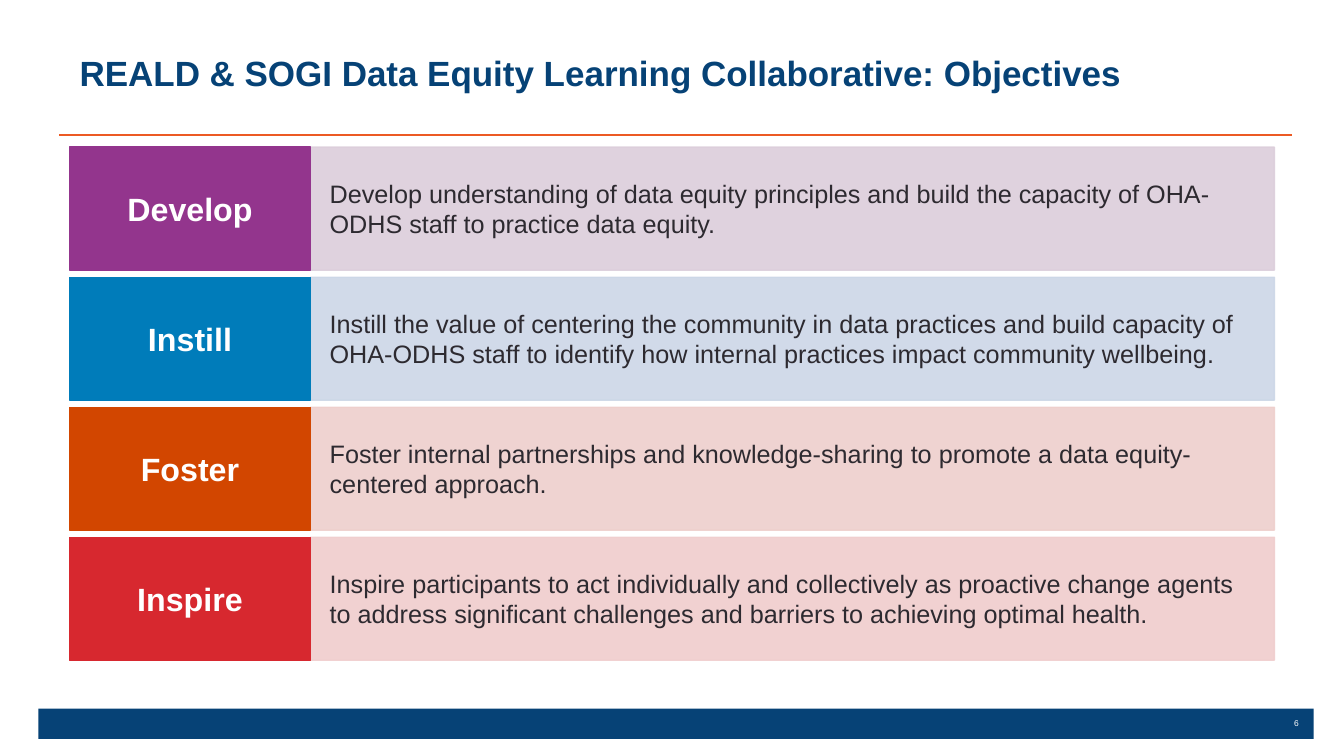
from pptx import Presentation
from pptx.dml.color import RGBColor
from pptx.enum.shapes import MSO_CONNECTOR, MSO_SHAPE
from pptx.enum.text import MSO_ANCHOR, PP_ALIGN
from pptx.oxml.ns import qn
from pptx.util import Inches, Pt
from lxml.etree import SubElement

SLIDE_W, SLIDE_H = 13.33, 7.5
NAVY, ORANGE, INK, WHITE = "064276", "EC5A24", "2D2A30", "FFFFFF"
LABEL_SHARE = 0.2
ROW_GAP = 0.07

OBJECTIVES = [
    ("Develop", "93358D", "DCCEDB",
     "Develop understanding of data equity principles and build the capacity "
     "of OHA-ODHS staff to practice data equity."),
    ("Instill", "007CBA", "CCD7E7",
     "Instill the value of centering the community in data practices and build "
     "capacity of OHA-ODHS staff to identify how internal practices impact "
     "community wellbeing."),
    ("Foster", "D24600", "EECFCC",
     "Foster internal partnerships and knowledge-sharing to promote a data "
     "equity-centered approach."),
    ("Inspire", "D7282F", "F0CDCD",
     "Inspire participants to act individually and collectively as proactive "
     "change agents to address significant challenges and barriers to "
     "achieving optimal health."),
]


def color(hex_string):
    return RGBColor.from_string(hex_string)


def write(shape, text, size, hex_string, bold=False, align=PP_ALIGN.LEFT,
          anchor=MSO_ANCHOR.MIDDLE, insets=(0.1, 0.05, 0.1, 0.05), spacing=1.0):
    frame = shape.text_frame
    frame.word_wrap = True
    frame.vertical_anchor = anchor
    (frame.margin_left, frame.margin_top,
     frame.margin_right, frame.margin_bottom) = map(Inches, insets)
    paragraph = frame.paragraphs[0]
    paragraph.alignment = align
    paragraph.line_spacing = spacing
    run = paragraph.add_run()
    run.text = text
    run.font.name = "Arial"
    run.font.size = Pt(size)
    run.font.bold = bold
    run.font.color.rgb = color(hex_string)


def add_block(slide, box, hex_string, opacity=100, outlined=True):
    block = slide.shapes.add_shape(MSO_SHAPE.RECTANGLE, *map(Inches, box))
    block.shadow.inherit = False
    block.fill.solid()
    block.fill.fore_color.rgb = color(hex_string)
    if outlined:
        block.line.color.rgb = color(hex_string)
        block.line.width = Pt(1)
    else:
        block.line.fill.background()
    if opacity < 100:
        for tint in block.element.spPr.iter(qn("a:srgbClr")):
            SubElement(tint, qn("a:alpha"), val=str(opacity * 1000))
    return block


def add_heading(slide, box):
    left, top, width, height = box
    title = slide.shapes.title
    title.left, title.top, title.width, title.height = map(
        Inches, (left, top, 10.94, height))
    write(title, "REALD & SOGI Data Equity Learning Collaborative: Objectives",
          25, NAVY, bold=True, anchor=MSO_ANCHOR.BOTTOM,
          insets=(0.1, 0.05, 0.1, 0.41), spacing=0.9)
    rule_y = Inches(top + height)
    rule = slide.shapes.add_connector(
        MSO_CONNECTOR.STRAIGHT, Inches(left - 0.1), rule_y,
        Inches(left + width + 0.17), rule_y)
    rule.line.color.rgb = color(ORANGE)
    rule.line.width = Pt(1)
    SubElement(rule.element.spPr, qn("a:effectLst"))


def add_objective(slide, box, objective):
    left, top, width, height = box
    name, strong, pale, statement = objective
    label_w = width * LABEL_SHARE
    statement_block = add_block(
        slide, (left + label_w, top, width - label_w, height), pale, opacity=90)
    write(statement_block, statement, 18, INK, insets=(0.19, 0.31, 0.19, 0.31))
    label_block = add_block(slide, (left, top, label_w, height), strong)
    write(label_block, name, 23, WHITE, bold=True, align=PP_ALIGN.CENTER,
          insets=(0.13, 0.12, 0.13, 0.12))


def add_objectives(slide, box):
    left, top, width, height = box
    pitch = (height + ROW_GAP) / len(OBJECTIVES)
    for row, objective in enumerate(OBJECTIVES):
        add_objective(slide, (left, top + row * pitch, width, pitch - ROW_GAP),
                      objective)


def add_footer(slide, box):
    left, top, width, height = box
    add_block(slide, box, NAVY, outlined=False)
    number_w = 2.49
    page_number = slide.shapes.add_textbox(*map(Inches, (
        left + width - number_w - 0.05, top + 0.05, number_w, height - 0.1)))
    write(page_number, "6", 6, WHITE, align=PP_ALIGN.RIGHT, spacing=0.9)


def main():
    deck = Presentation()
    deck.slide_width, deck.slide_height = Inches(SLIDE_W), Inches(SLIDE_H)
    slide = deck.slides.add_slide(deck.slide_layouts.get_by_name("Title Only"))
    add_footer(slide, (0.38, 7.03, 12.65, 0.3))
    add_heading(slide, (0.69, 0.44, 11.95, 0.9))
    add_objectives(slide, (0.69, 1.46, 11.95, 5.09))
    deck.save("out.pptx")


if __name__ == "__main__":
    main()
